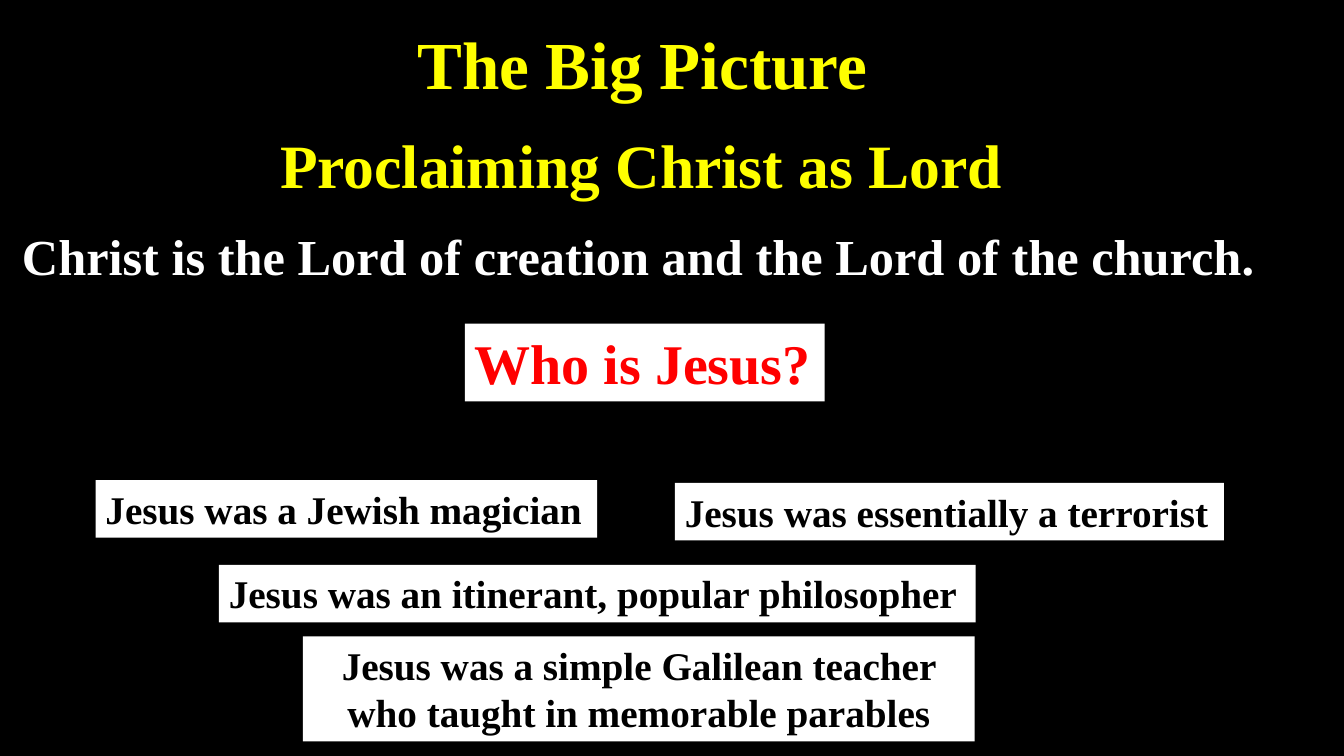
from dataclasses import dataclass

from pptx import Presentation
from pptx.dml.color import RGBColor
from pptx.enum import text
from pptx.util import Pt

FONT = "Times New Roman"
COLORS = {"black": "000000", "white": "FFFFFF", "yellow": "FFFF00", "red": "FF0000"}


@dataclass
class Box:
    words: str
    left: float
    top: float
    width: float
    height: float
    size: float = 28
    color: str = "black"
    fill: str | None = "white"
    align: text.PP_ALIGN = text.PP_ALIGN.LEFT


TITLE = Box("The Big Picture", 290.9, 12.2, 339.1, 65.5, 48, "yellow", None)
BOXES = [
    Box("Proclaiming Christ as Lord", 193, 87.1, 535.7, 60.5, 44, "yellow", None),
    Box("Christ is the Lord of creation and the Lord of the church.",
        8.6, 157, 903.6, 51.1, 36, "white", None),
    Box("Who is Jesus?", 332.1, 231.1, 257, 55.7, 40, "red"),
    Box("Jesus was essentially a terrorist", 482.1, 344.9, 392.2, 41.2),
    Box("Jesus was an itinerant, popular philosopher", 156.4, 403.4, 540.5, 41.2),
    Box("Jesus was a simple Galilean teacher who taught in memorable parables",
        216.4, 454.5, 479.8, 75.1, align=text.PP_ALIGN.CENTER),
    Box("Jesus was a Jewish magician", 68.3, 342.9, 358.3, 41.2),
]


def rgb(name: str) -> RGBColor:
    return RGBColor.from_string(COLORS[name])


def write(tf, words: str, *, size: float, color: str, align: text.PP_ALIGN) -> None:
    tf.word_wrap = True
    tf.auto_size = text.MSO_AUTO_SIZE.NONE
    tf.vertical_anchor = text.MSO_ANCHOR.TOP
    p = tf.paragraphs[0]
    p.alignment = align
    r = p.add_run()
    r.text = words
    r.font.name = FONT
    r.font.size = Pt(size)
    r.font.bold = True
    r.font.color.rgb = rgb(color)


def place(sp, box: Box) -> None:
    """Position, fill and letter a text box or placeholder."""
    sp.left, sp.top = Pt(box.left), Pt(box.top)
    sp.width, sp.height = Pt(box.width), Pt(box.height)
    if box.fill:
        sp.fill.solid()
        sp.fill.fore_color.rgb = rgb(box.fill)
    write(sp.text_frame, box.words, size=box.size, color=box.color, align=box.align)


def main() -> None:
    prs = Presentation()
    prs.slide_width, prs.slide_height = Pt(960), Pt(540)
    s = prs.slides.add_slide(prs.slide_layouts.get_by_name("Title Only"))
    s.background.fill.solid()
    s.background.fill.fore_color.rgb = rgb("black")
    place(s.shapes.title, TITLE)
    for box in BOXES:
        place(s.shapes.add_textbox(0, 0, 0, 0), box)
    prs.save("out.pptx")


if __name__ == "__main__":
    main()
